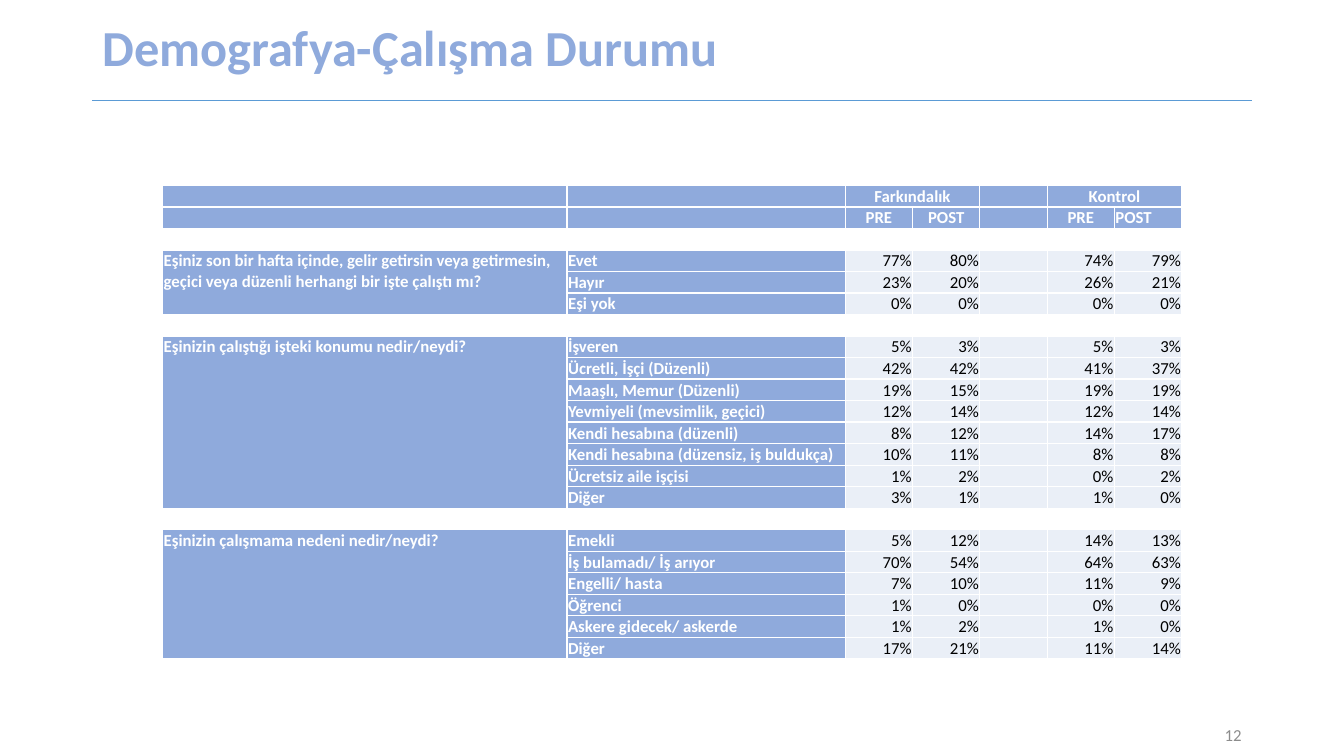
from dataclasses import dataclass

import pptx
import pptx.dml.color
import pptx.enum.shapes
import pptx.enum.text
import pptx.oxml
import pptx.oxml.ns
import pptx.util

Pt = pptx.util.Pt
ALIGN = pptx.enum.text.PP_ALIGN
ANCHOR = pptx.enum.text.MSO_ANCHOR

FONT = "Calibri"
BLUE, PALE, WHITE, BLACK = "8FAADC", "EAEFF7", "FFFFFF", "000000"
RULE_BLUE, GREY = "5B9BD5", "8C8C8C"
COLUMN_WIDTHS = [288.9, 198.7] + [48.1] * 5
ROW_HEIGHT = 15.15
VALUE_COLUMNS = (2, 3, 5, 6)  # column 4 separates the two groups


@dataclass
class Answer:
    label: str
    values: tuple[int, int, int, int]


@dataclass
class Question:
    text: str
    answers: list[Answer]


QUESTIONS = [
    Question("Eşiniz son bir hafta içinde, gelir getirsin veya getirmesin, "
             "geçici veya düzenli herhangi bir işte çalıştı mı?", [
        Answer("Evet", (77, 80, 74, 79)),
        Answer("Hayır", (23, 20, 26, 21)),
        Answer("Eşi yok", (0, 0, 0, 0)),
    ]),
    Question("Eşinizin çalıştığı işteki konumu nedir/neydi?", [
        Answer("İşveren", (5, 3, 5, 3)),
        Answer("Ücretli, İşçi (Düzenli)", (42, 42, 41, 37)),
        Answer("Maaşlı, Memur (Düzenli)", (19, 15, 19, 19)),
        Answer("Yevmiyeli (mevsimlik, geçici)", (12, 14, 12, 14)),
        Answer("Kendi hesabına (düzenli)", (8, 12, 14, 17)),
        Answer("Kendi hesabına (düzensiz, iş buldukça)", (10, 11, 8, 8)),
        Answer("Ücretsiz aile işçisi", (1, 2, 0, 2)),
        Answer("Diğer", (3, 1, 1, 0)),
    ]),
    Question("Eşinizin çalışmama nedeni nedir/neydi?", [
        Answer("Emekli", (5, 12, 14, 13)),
        Answer("İş bulamadı/ İş arıyor", (70, 54, 64, 63)),
        Answer("Engelli/ hasta", (7, 10, 11, 9)),
        Answer("Öğrenci", (1, 0, 0, 0)),
        Answer("Askere gidecek/ askerde", (1, 2, 1, 0)),
        Answer("Diğer", (17, 21, 11, 14)),
    ]),
]


def color(value: str) -> pptx.dml.color.RGBColor:
    return pptx.dml.color.RGBColor.from_string(value)


def add_run(paragraph, text: str, size: float, text_color: str, bold: bool = False) -> None:
    run = paragraph.add_run()
    run.text = text
    run.font.name = FONT
    run.font.size = Pt(size)
    run.font.bold = bold
    run.font.color.rgb = color(text_color)


def prepare_cell(cell, fill: str) -> None:
    """Give a cell its margins, white borders, fill and empty-line size."""
    cell.margin_left = cell.margin_right = cell.margin_top = Pt(0.72)
    cell.margin_bottom = Pt(0)
    properties = cell._tc.get_or_add_tcPr()
    for side in ("lnL", "lnR", "lnT", "lnB"):
        properties.append(pptx.oxml.parse_xml(
            f'<a:{side} {pptx.oxml.ns.nsdecls("a")} w="12700"><a:solidFill>'
            f'<a:srgbClr val="{WHITE}"/></a:solidFill></a:{side}>'))
    cell.fill.solid()
    cell.fill.fore_color.rgb = color(fill)
    cell.text_frame.paragraphs[0]._p.append(pptx.oxml.parse_xml(
        f'<a:endParaRPr {pptx.oxml.ns.nsdecls("a")} sz="1200"/>'))


def write_cell(cell, text: str, align=ALIGN.LEFT, anchor=ANCHOR.TOP,
               text_color: str = WHITE, bold: bool = True) -> None:
    cell.vertical_anchor = anchor
    paragraph = cell.text_frame.paragraphs[0]
    paragraph.alignment = align
    add_run(paragraph, text, 12, text_color, bold)


def fill_row(table, row: int, fills: list[str]) -> None:
    table.rows[row].height = Pt(ROW_HEIGHT)
    for column, fill in enumerate(fills):
        prepare_cell(table.cell(row, column), fill)


def add_header(table) -> None:
    for row in (0, 1):
        fill_row(table, row, [BLUE] * 7)
    for column, group in ((2, "Farkındalık"), (5, "Kontrol")):
        table.cell(0, column).merge(table.cell(0, column + 1))
        write_cell(table.cell(0, column), group, ALIGN.CENTER, ANCHOR.BOTTOM)
    for column, phase in zip(VALUE_COLUMNS, ("PRE", "POST") * 2):
        align = ALIGN.LEFT if column == 6 else ALIGN.CENTER
        write_cell(table.cell(1, column), phase, align, ANCHOR.BOTTOM)


def add_question(table, first_row: int, question: Question) -> int:
    """Write a blank row and a question block; return the next free row."""
    fill_row(table, first_row, [WHITE] * 7)
    top = first_row + 1
    for row, answer in enumerate(question.answers, top):
        fill_row(table, row, [BLUE] * 2 + [PALE] * 5)
        write_cell(table.cell(row, 1), answer.label)
        for column, value in zip(VALUE_COLUMNS, answer.values):
            write_cell(table.cell(row, column), f"{value}%", ALIGN.RIGHT,
                       text_color=BLACK, bold=False)
    next_row = top + len(question.answers)
    table.cell(top, 0).merge(table.cell(next_row - 1, 0))
    write_cell(table.cell(top, 0), question.text)
    return next_row


def add_survey_table(slide) -> None:
    row_count = 2 + sum(1 + len(question.answers) for question in QUESTIONS)
    table = slide.shapes.add_table(
        row_count, len(COLUMN_WIDTHS), Pt(116.2), Pt(132.5),
        Pt(sum(COLUMN_WIDTHS)), Pt(row_count * ROW_HEIGHT)).table
    table.horz_banding = False
    for column, width in zip(table.columns, COLUMN_WIDTHS):
        column.width = Pt(width)
    add_header(table)
    row = 2
    for question in QUESTIONS:
        row = add_question(table, row, question)


def main() -> None:
    presentation = pptx.Presentation()
    presentation.slide_width, presentation.slide_height = Pt(960), Pt(540)
    slide = presentation.slides.add_slide(presentation.slide_layouts[5])

    # Title
    title = slide.shapes.title
    title.left, title.top, title.width, title.height = Pt(66), Pt(0), Pt(828), Pt(72)
    title.text_frame.auto_size = pptx.enum.text.MSO_AUTO_SIZE.NONE
    title.text_frame.vertical_anchor = ANCHOR.MIDDLE
    paragraph = title.text_frame.paragraphs[0]
    paragraph.alignment = ALIGN.LEFT
    paragraph.line_spacing = 0.9
    add_run(paragraph, "Demografya-Çalışma Durumu", 36, BLUE, True)

    # Rule under the title
    rule = slide.shapes.add_connector(
        pptx.enum.shapes.MSO_CONNECTOR.STRAIGHT, Pt(66), Pt(72), Pt(894), Pt(72))
    rule.line.color.rgb = color(RULE_BLUE)
    rule.line.width = Pt(0.5)
    rule._element.spPr.append(pptx.oxml.parse_xml(
        f'<a:effectLst {pptx.oxml.ns.nsdecls("a")}/>'))

    # Survey results
    add_survey_table(slide)

    # Slide number
    number = slide.shapes.add_textbox(Pt(678), Pt(510.5), Pt(216), Pt(28.8))
    number.text_frame.word_wrap = True
    number.text_frame.vertical_anchor = ANCHOR.MIDDLE
    paragraph = number.text_frame.paragraphs[0]
    paragraph.alignment = ALIGN.RIGHT
    add_run(paragraph, "12", 12, GREY)

    presentation.save("out.pptx")


if __name__ == "__main__":
    main()
